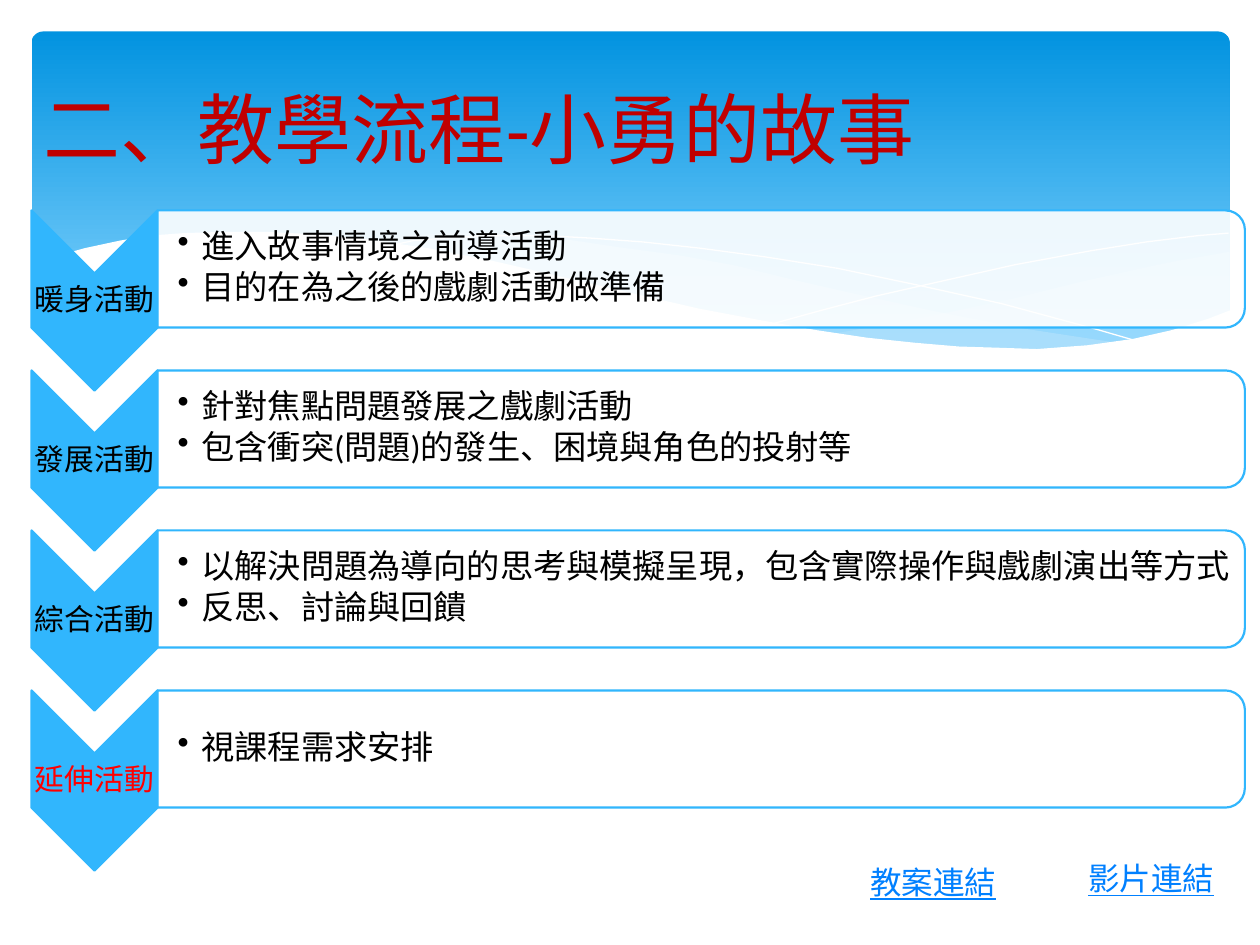
from lxml import etree
from pptx import Presentation
from pptx.dml.color import RGBColor
from pptx.enum.shapes import MSO_SHAPE
from pptx.enum.text import MSO_ANCHOR, PP_ALIGN
from pptx.oxml.ns import qn
from pptx.util import Inches, Pt

ROUND_RECT = MSO_SHAPE.ROUNDED_RECTANGLE
TOP_ROUNDED = MSO_SHAPE.ROUND_2_SAME_RECTANGLE
CHEVRON = MSO_SHAPE.CHEVRON
TOP, MIDDLE = MSO_ANCHOR.TOP, MSO_ANCHOR.MIDDLE
LEFT, CENTER = PP_ALIGN.LEFT, PP_ALIGN.CENTER

FONT = "Calibri"
WHITE = RGBColor(0xFF, 0xFF, 0xFF)
BLACK = RGBColor(0, 0, 0)
RED = RGBColor(0xFF, 0, 0)
DARK_RED = RGBColor(0xC0, 0, 0)
SKY = RGBColor(0x31, 0xB6, 0xFD)
DEEP_BLUE = RGBColor(0x02, 0x93, 0xE0)
LIGHT_BLUE = RGBColor(0x83, 0xD3, 0xFE)
PALE_BLUE = RGBColor(0xC6, 0xE7, 0xFC)
LINK_BLUE = RGBColor(0x00, 0x80, 0xFF)

RIGHT_WAVE = [
    (9.52, .16), (9.12, .23), (8.83, .29), (8.38, .39), (7.82, .53), (7.3, .64),
    (6.83, .73), (6.38, .81), (6.82, .87), (7.22, .91), (7.58, .93), (7.91, .94),
    (8.31, .92), (8.66, .88), (8.98, .81), (9.26, .73), (9.53, .63), (9.53, .16)]
MIDDLE_WAVE = [
    (8.7, .89), (8.43, .85), (7.84, .76), (7.18, .63), (6.45, .47), (6.06, .38),
    (5.61, .27), (5.18, .19), (4.66, .12), (4.19, .05), (3.76, .02), (3.38, .01),
    (3.05, .03), (2.63, .07), (3, .12), (3.39, .19), (3.81, .27), (4.26, .38),
    (5.07, .56), (5.78, .71), (6.42, .82), (6.99, .9), (7.5, .93), (7.95, .94),
    (8.34, .93)]
FALLING_LINE = [
    (2.86, .11), (3.05, .07), (3.3, .05), (3.64, .03), (4.1, .03), (4.46, .05),
    (4.87, .08), (5.33, .13), (5.85, .2), (6.42, .29), (7.04, .42), (7.72, .57),
    (8.46, .77), (8.84, .88)]
RISING_LINE = [
    (5.9, .73), (6.3, .62), (6.72, .51), (7.25, .39), (7.83, .26), (8.43, .15),
    (8.87, .08), (9.28, .03), (9.52, .01)]
FRONT_WAVE = [
    (9.54, .62), (9.36, .69), (9.07, .78), (8.76, .85), (8.4, .9), (8, .93),
    (7.7, .92), (7.38, .91), (7.03, .88), (6.65, .84), (6.25, .78), (5.8, .7),
    (5.32, .61), (4.8, .49), (4.24, .36), (3.68, .23), (3.17, .13), (2.69, .06),
    (2.27, .02), (1.88, 0), (1.54, 0), (1.23, .01), (.96, .03), (.72, .07),
    (.44, .13), (.23, .19), (.06, .26), (0, .29), (0, 1.45), (9.54, 1.45)]

STEPS = [
    ("暖身活動", BLACK, ["進入故事情境之前導活動", "目的在為之後的戲劇活動做準備"]),
    ("發展活動", BLACK, ["針對焦點問題發展之戲劇活動", "包含衝突(問題)的發生、困境與角色的投射等"]),
    ("綜合活動", BLACK, ["以解決問題為導向的思考與模擬呈現，包含實際操作與戲劇演出等方式",
                     "反思、討論與回饋"]),
    ("延伸活動", RED, ["視課程需求安排"]),
]


def style(sp, fill=None, line=None, width=0, alpha=None):
    """Set the fill, its opacity in percent, and the outline of a shape."""
    sp.shadow.inherit = False
    if fill is None:
        sp.fill.background()
    else:
        sp.fill.solid()
        sp.fill.fore_color.rgb = fill
    if alpha is not None:
        clr = sp._element.spPr.find(qn("a:solidFill"))[0]
        etree.SubElement(clr, qn("a:alpha"), val=str(alpha * 1000))
    if line is None:
        sp.line.fill.background()
    else:
        sp.line.color.rgb = line
        sp.line.width = Pt(width)


def add_text(s, box, lines, size=18, color=BLACK, align=LEFT, anchor=TOP, insets=None,
             spacing=None, after=None, bullet=False, underline=None):
    """Add a text box with one paragraph for each line."""
    tf = s.shapes.add_textbox(*map(Inches, box)).text_frame
    tf.word_wrap = True
    tf.vertical_anchor = anchor
    if insets:
        (tf.margin_left, tf.margin_top,
         tf.margin_right, tf.margin_bottom) = map(Inches, insets)
    for i, line in enumerate(lines):
        p = tf.add_paragraph() if i else tf.paragraphs[0]
        p.alignment = align
        if spacing:
            p.line_spacing = spacing
        if after:
            p.space_after = Pt(after)
        if bullet:
            pPr = p._p.get_or_add_pPr()
            pPr.set("marL", str(Inches(0.19)))
            pPr.set("indent", str(-Inches(0.19)))
            etree.SubElement(pPr, qn("a:buChar"), char="•")
        r = p.add_run()
        r.text = line
        r.font.name, r.font.size = FONT, Pt(size)
        r.font.color.rgb = color
        r.font.underline = underline


def add_curve(s, x, y, points, close=True, **look):
    """Draw an outline whose points are offsets from x, y."""
    pts = [(Inches(x + dx), Inches(y + dy)) for dx, dy in points]
    fb = s.shapes.build_freeform(*pts[0], scale=1.0)
    fb.add_line_segments(pts[1:], close=close)
    style(fb.convert_to_shape(), **look)


def add_turned(s, shape, x, y, w, h, **look):
    """Add a shape turned a quarter clockwise that fills the given box."""
    sp = s.shapes.add_shape(shape, Inches(x + (w - h) / 2), Inches(y + (h - w) / 2),
                            Inches(h), Inches(w))
    sp.rotation = 90
    style(sp, **look)


def add_header(s, x, y, w, h):
    """Draw the gradient banner with its waves."""
    sp = s.shapes.add_shape(ROUND_RECT, *map(Inches, (x, y, w, h)))
    sp.adjustments[0] = 0.034
    style(sp)
    sp.fill.gradient()
    sp.fill.gradient_angle = 270
    for stop, color, pos in zip(sp.fill.gradient_stops, (DEEP_BLUE, LIGHT_BLUE), (0, 0.9)):
        stop.color.rgb = color
        stop.position = pos
    wx, wy = x - 0.02, y + 1.59
    add_curve(s, wx, wy, RIGHT_WAVE, fill=PALE_BLUE, alpha=29)
    add_curve(s, wx, wy, MIDDLE_WAVE, fill=PALE_BLUE, alpha=40)
    for points in (FALLING_LINE, RISING_LINE):
        add_curve(s, wx, wy, points, close=False, line=WHITE)
    add_curve(s, wx, wy, FRONT_WAVE, fill=WHITE)


def add_step(s, x, y, w, label, color, items):
    """Draw one step: a chevron with its label and a panel of bullets."""
    add_turned(s, CHEVRON, x, y, 1, 1.43, fill=SKY, line=SKY, width=1.25)
    add_text(s, (x, y + 0.5, 1, 0.43), [label], size=17, color=color, align=CENTER,
             anchor=MIDDLE, insets=[0.01] * 4, spacing=0.9, after=6)
    add_turned(s, TOP_ROUNDED, x + 1, y, w - 1, 0.93, fill=WHITE, alpha=90,
               line=SKY, width=1.25)
    add_text(s, (x + 1.01, y + 0.04, w - 1.05, 0.84), items, size=19, anchor=MIDDLE,
             insets=(0.15, 0.01, 0.01, 0.01), spacing=0.9, after=3, bullet=True)


def add_steps(s, x, y, w, pitch):
    """Stack the steps at an equal pitch."""
    for i, step in enumerate(STEPS):
        add_step(s, x, y + i * pitch, w, *step)


def main():
    """Build the slide and save it."""
    prs = Presentation()
    prs.slide_width, prs.slide_height = Inches(10), Inches(7.5)
    s = prs.slides.add_slide(prs.slide_layouts[6])
    add_header(s, 0.25, 0.25, 9.51, 2.7)
    add_text(s, (0.25, 0.6, 8.58, 0.84), ["二、教學流程-小勇的故事"], size=44, color=DARK_RED)
    for x, y, text in ((6.81, 6.8, "教案連結"), (8.54, 6.77, "影片連結")):
        add_text(s, (x, y, 1.34, 0.4), [text], color=LINK_BLUE, underline=True)
    add_steps(s, 0.25, 1.67, 9.63, 1.27)
    prs.save("out.pptx")


if __name__ == "__main__":
    main()
